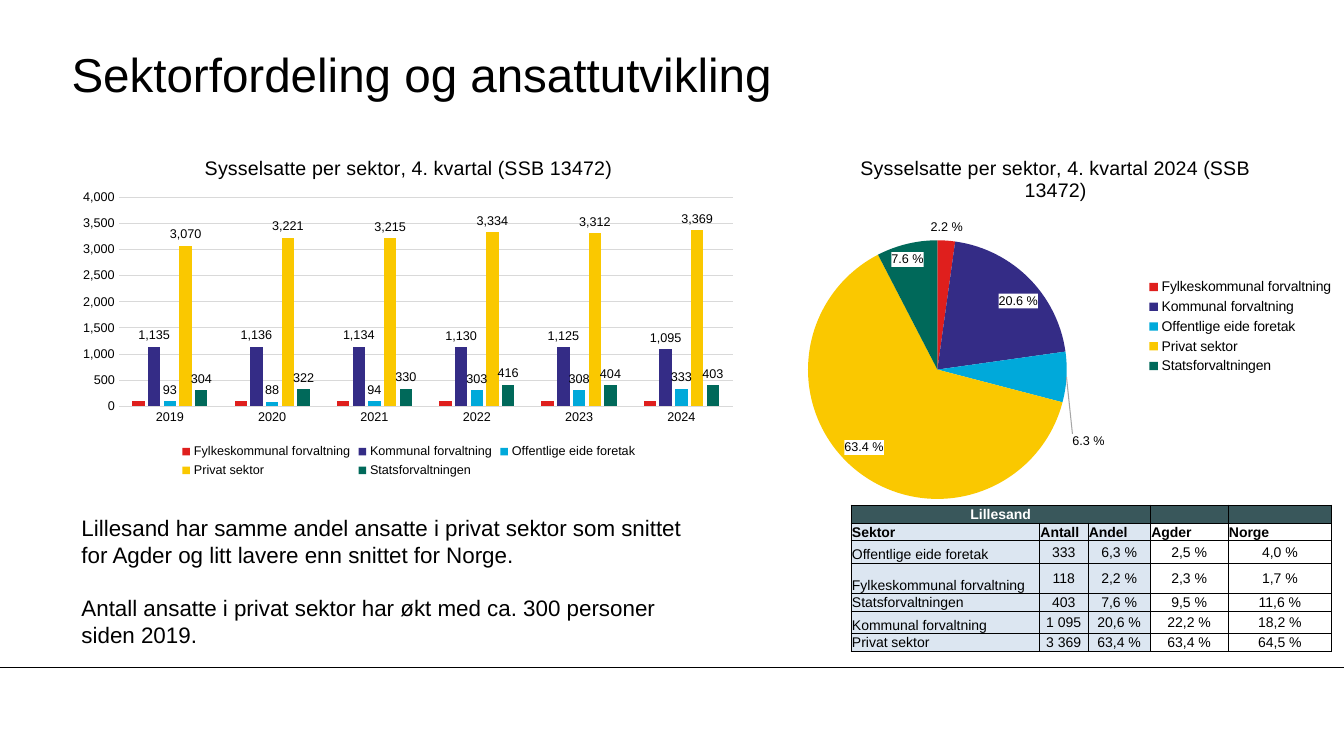
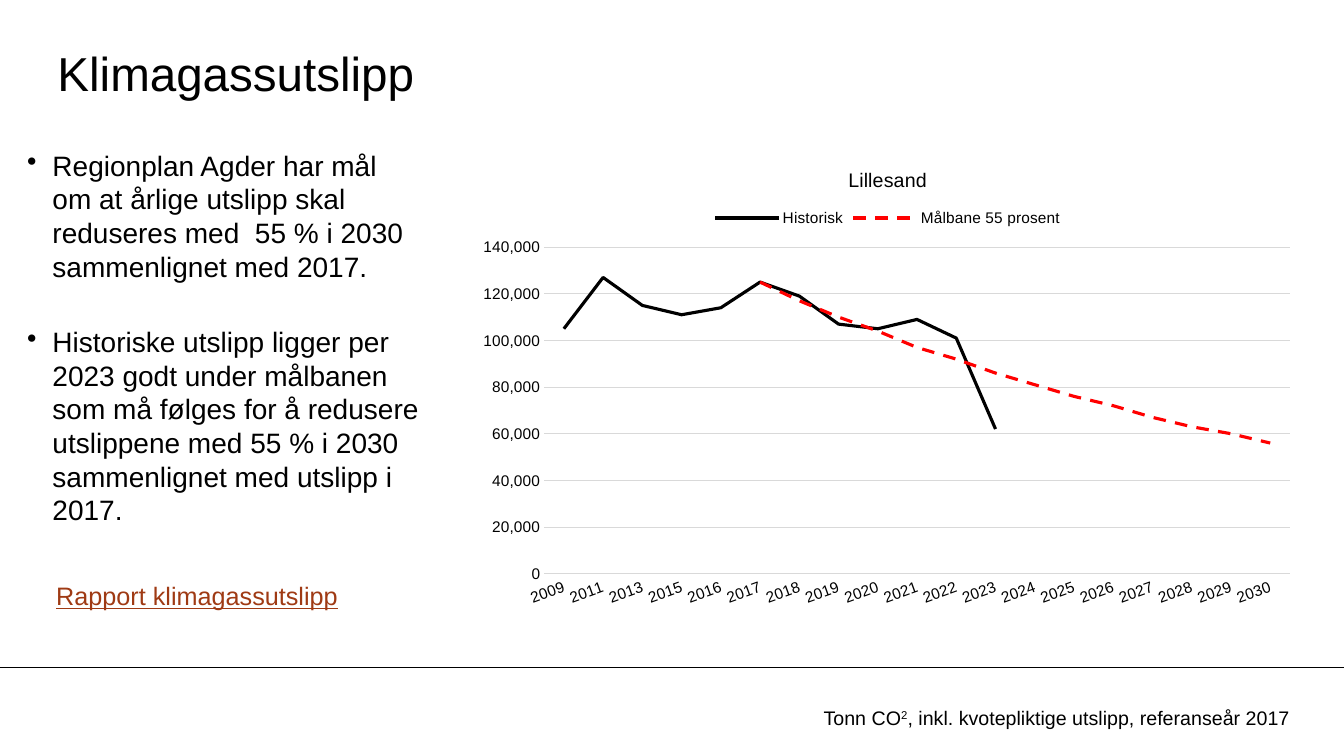
from lxml import etree
from pptx import Presentation
from pptx.chart.data import CategoryChartData
from pptx.dml.color import RGBColor
from pptx.enum.chart import XL_CHART_TYPE as ChartType
from pptx.enum.chart import XL_LABEL_POSITION as LabelPos
from pptx.enum.chart import XL_LEGEND_POSITION as LegendPos
from pptx.enum.chart import XL_MARKER_STYLE as Marker
from pptx.enum.chart import XL_TICK_MARK as Tick
from pptx.enum.dml import MSO_LINE_DASH_STYLE as Dash
from pptx.enum.shapes import MSO_CONNECTOR as Connector
from pptx.enum.text import MSO_ANCHOR as Anchor
from pptx.enum.text import PP_ALIGN as Align
from pptx.oxml.ns import qn
from pptx.util import Inches, Pt

# Shared look
FONT = "Arial"
BLACK, WHITE, GRID, LEADER = "000000", "FFFFFF", "D9D9D9", "A6A6A6"
HEADER, OWN_AREA, LINK, TARGET = "39575B", "DCE6F1", "9F3A14", "FF0000"
SECTOR_COLORS = {
    "Fylkeskommunal forvaltning": "DF1F1D",
    "Kommunal forvaltning": "342C86",
    "Offentlige eide foretak": "00A9DA",
    "Privat sektor": "FAC800",
    "Statsforvaltningen": "00695A",
}

# Content
EMPLOYED = [
    [100] * 6,
    [1135, 1136, 1134, 1130, 1125, 1095],
    [93, 88, 94, 303, 308, 333],
    [3070, 3221, 3215, 3334, 3312, 3369],
    [304, 322, 330, 416, 404, 403],
]
SHARES = [2.2, 20.6, 6.3, 63.4, 7.6]
SECTOR_ROWS = [
    ["Lillesand", "", "", "", ""],
    ["Sektor", "Antall", "Andel", "Agder", "Norge"],
    ["Offentlige eide foretak", "333", "6,3 %", "2,5 %", "4,0 %"],
    ["Fylkeskommunal forvaltning", "118", "2,2 %", "2,3 %", "1,7 %"],
    ["Statsforvaltningen", "403", "7,6 %", "9,5 %", "11,6 %"],
    ["Kommunal forvaltning", "1 095", "20,6 %", "22,2 %", "18,2 %"],
    ["Privat sektor", "3 369", "63,4 %", "63,4 %", "64,5 %"],
]
COLUMN_WIDTHS = [1.87, 0.48, 0.62, 0.77, 1.03]
ROW_HEIGHTS = [0.16, 0.16, 0.22, 0.3, 0.16, 0.22, 0.16]
EMISSION_YEARS = ["2009", "2011", "2013"] + [str(y) for y in range(2015, 2031)]
HISTORIC = [105000, 127000, 115000, 111000, 114000, 125000,
            119000, 107000, 105000, 109000, 101000, 62000] + [None] * 7
TARGET_PATH = [None] * 5 + [125000, 117000, 110000, 104000, 97000, 92000, 86000,
                            81000, 76000, 72000, 67000, 63000, 60000, 56000]


def rgb(color):
    return RGBColor.from_string(color)


def style_font(font, size, color=BLACK, bold=False):
    font.name, font.size, font.bold = FONT, Pt(size), bold
    font.color.rgb = rgb(color)


def add_run(paragraph, text, size, color=BLACK, bold=False):
    run = paragraph.add_run()
    run.text = text
    style_font(run.font, size, color, bold)
    return run


def add_solid_fill(parent, color):
    fill = etree.SubElement(parent, qn("a:solidFill"))
    etree.SubElement(fill, qn("a:srgbClr")).set("val", color)


# Text
def text_frame(slide, box, inset=True, anchor=Anchor.TOP):
    frame = slide.shapes.add_textbox(*map(Inches, box)).text_frame
    frame.word_wrap = True
    frame.vertical_anchor = anchor
    if not inset:
        frame.margin_left = frame.margin_right = 0
        frame.margin_top = frame.margin_bottom = 0
    return frame


def add_paragraphs(frame, texts, size, gap, bullet=False):
    for i, text in enumerate(texts):
        paragraph = frame.add_paragraph() if i else frame.paragraphs[0]
        if bullet:
            props = paragraph._p.get_or_add_pPr()
            props.set("marL", str(Inches(0.25)))
            props.set("indent", str(Inches(-0.25)))
            etree.SubElement(props, qn("a:buChar")).set("char", "•")
        if i:
            paragraph.space_before = Pt(gap)
        add_run(paragraph, text, size)


def add_slide(prs, title, left, top):
    """Blank slide with the shared title style and footer rule."""
    slide = prs.slides.add_slide(prs.slide_layouts[6])
    rule = slide.shapes.add_connector(
        Connector.STRAIGHT, 0, Inches(6.62), prs.slide_width, Inches(6.62))
    rule.line.color.rgb = rgb(BLACK)
    rule.line.width = Pt(0.75)
    etree.SubElement(rule._element.spPr, qn("a:effectLst"))
    frame = text_frame(slide, (left, top, 11.1, 0.75), False, Anchor.MIDDLE)
    add_run(frame.paragraphs[0], title, 34)
    return slide


# Table
def add_borders(cell):
    props = cell._tc.get_or_add_tcPr()
    for i, side in enumerate(("a:lnL", "a:lnR", "a:lnT", "a:lnB")):
        border = etree.Element(qn(side), w=str(Pt(0.5)))
        add_solid_fill(border, BLACK)
        props.insert(i, border)


def fill_cell(cell, text, row, col):
    if row == 0 or col < 3:
        cell.fill.solid()
        cell.fill.fore_color.rgb = rgb(OWN_AREA if row else HEADER)
    else:
        cell.fill.background()
    add_borders(cell)
    cell.margin_left = cell.margin_right = cell.margin_top = Inches(0.01)
    cell.margin_bottom = 0
    figure = row > 1 and col > 0
    cell.vertical_anchor = Anchor.MIDDLE if figure else Anchor.BOTTOM
    paragraph = cell.text_frame.paragraphs[0]
    paragraph.alignment = Align.CENTER if figure or row == 0 else Align.LEFT
    if text:
        add_run(paragraph, text, 10, BLACK if row else WHITE, bold=row < 2)
    else:
        etree.SubElement(paragraph._p, qn("a:endParaRPr")).set("sz", "1000")


def add_sector_table(slide, box):
    table = slide.shapes.add_table(
        len(ROW_HEIGHTS), len(COLUMN_WIDTHS), *map(Inches, box)).table
    table.first_row = table.horz_banding = False
    for column, width in zip(table.columns, COLUMN_WIDTHS):
        column.width = Inches(width)
    for row, height in zip(table.rows, ROW_HEIGHTS):
        row.height = Inches(height)
    for r, texts in enumerate(SECTOR_ROWS):
        for c, text in enumerate(texts):
            fill_cell(table.cell(r, c), text, r, c)
    table.cell(0, 0).merge(table.cell(0, 2))


# Charts
def manual_layout(**places):
    layout = etree.Element(qn("c:layout"))
    manual = etree.SubElement(layout, qn("c:manualLayout"))
    for name, value in places.items():
        etree.SubElement(manual, qn(f"c:{name}")).set("val", str(value))
    return layout


def add_chart(slide, kind, box, plot_box, title, cats, series, legend, legend_size):
    data = CategoryChartData()
    data.categories = cats
    for name, values in series:
        data.add_series(name, values)
    chart = slide.shapes.add_chart(kind, *map(Inches, box), data).chart
    style_font(chart.font, 10)
    add_run(chart.chart_title.text_frame.paragraphs[0], title, 14)
    chart.has_legend = True
    chart.legend.position = legend
    chart.legend.include_in_layout = False
    style_font(chart.legend.font, legend_size)
    # Fixed inner plot area, as fractions of the chart
    area = chart.element.find(".//" + qn("c:plotArea"))
    for old in area.findall(qn("c:layout")):
        area.remove(old)
    x, y, w, h = plot_box
    area.insert(0, manual_layout(layoutTarget="inner", xMode="edge", yMode="edge",
                                 x=x, y=y, w=w, h=h))
    return chart


def style_axes(chart, size, top, step):
    years, amounts = chart.category_axis, chart.value_axis
    for axis in (years, amounts):
        style_font(axis.tick_labels.font, size)
        axis.major_tick_mark = axis.minor_tick_mark = Tick.NONE
    amounts.minimum_scale, amounts.maximum_scale = 0, top
    amounts.major_unit = step
    amounts.tick_labels.number_format = "#,##0"
    amounts.tick_labels.number_format_is_linked = False
    amounts.format.line.fill.background()
    for line in (years.format.line, amounts.major_gridlines.format.line):
        line.color.rgb = rgb(GRID)
        line.width = Pt(0.75)


def label_values(series, number_format, position):
    labels = series.data_labels
    labels.show_value = True
    labels.number_format = number_format
    labels.number_format_is_linked = False
    labels.position = position
    style_font(labels.font, 9)


def add_employed_chart(slide):
    chart = add_chart(
        slide, ChartType.COLUMN_CLUSTERED, (0.71, 1.38, 6.69, 3.4),
        (0.07, 0.17, 0.91, 0.61), "Sysselsatte per sektor, 4. kvartal (SSB 13472)",
        [str(y) for y in range(2019, 2025)], zip(SECTOR_COLORS, EMPLOYED),
        LegendPos.BOTTOM, 9)
    style_axes(chart, 9, 4000, 500)
    plot = chart.plots[0]
    plot.gap_width, plot.overlap = 219, -27
    plot.vary_by_categories = False
    for i, (sector, color) in enumerate(zip(plot.series, SECTOR_COLORS.values())):
        sector.format.fill.solid()
        sector.format.fill.fore_color.rgb = rgb(color)
        if i:
            label_values(sector, "#,##0", LabelPos.OUTSIDE_END)


def add_share_chart(slide):
    percent = '0.0" %"'
    chart = add_chart(
        slide, ChartType.PIE, (7.61, 1.38, 5.72, 3.72), (0.07, 0.27, 0.45, 0.69),
        "Sysselsatte per sektor, 4. kvartal 2024 (SSB 13472)",
        list(SECTOR_COLORS), [("Andel", SHARES)], LegendPos.RIGHT, 10)
    plot = chart.plots[0]
    plot.vary_by_categories = True
    shares = plot.series[0]
    for i, color in enumerate(SECTOR_COLORS.values()):
        fill = shares.points[i].format.fill
        fill.solid()
        fill.fore_color.rgb = rgb(color)
    label_values(shares, percent, LabelPos.BEST_FIT)
    # White plates behind the labels, grey leader line
    labels = chart.element.find(".//" + qn("c:dLbls"))
    plate = etree.Element(qn("c:spPr"))
    add_solid_fill(plate, WHITE)
    labels.find(qn("c:numFmt")).addnext(plate)
    leader = etree.SubElement(labels, qn("c:leaderLines"))
    leader_look = etree.SubElement(leader, qn("c:spPr"))
    add_solid_fill(etree.SubElement(leader_look, qn("a:ln"), w=str(Pt(0.75))), LEADER)
    # The two narrow slices are labelled outside, the second one further down
    for i in (0, 2):
        label = shares.points[i].data_label
        style_font(label.font, 9)
        label.position = LabelPos.OUTSIDE_END
    for label in labels.findall(qn("c:dLbl")):
        index = label.find(qn("c:idx"))
        index.addnext(etree.Element(qn("c:numFmt"), formatCode=percent, sourceLinked="0"))
        if index.get("val") == "2":
            index.addnext(manual_layout(x=0, y=0.17))


def add_emission_chart(slide):
    chart = add_chart(
        slide, ChartType.LINE, (4.65, 1.48, 8.31, 4.63), (0.09, 0.21, 0.89, 0.7),
        "Lillesand", EMISSION_YEARS,
        [("Historisk", HISTORIC), ("Målbane 55 prosent", TARGET_PATH)],
        LegendPos.TOP, 11)
    style_axes(chart, 11, 140000, 20000)
    slant = chart.element.find(f".//{qn('c:catAx')}/{qn('c:txPr')}/{qn('a:bodyPr')}")
    slant.set("rot", str(-20 * 60000))
    for path_line, color in zip(chart.plots[0].series, (BLACK, TARGET)):
        path_line.smooth = False
        path_line.marker.style = Marker.NONE
        path_line.format.line.color.rgb = rgb(color)
        path_line.format.line.width = Pt(2.25)
    path_line.format.line.dash_style = Dash.DASH


# Slides
def add_sector_slide(prs):
    slide = add_slide(prs, "Sektorfordeling og ansattutvikling", 0.71, 0.35)
    add_paragraphs(text_frame(slide, (0.71, 5.05, 6.41, 1.45)), [
        "Lillesand har samme andel ansatte i privat sektor som snittet for Agder "
        "og litt lavere enn snittet for Norge.",
        "Antall ansatte i privat sektor har økt med ca. 300 personer siden 2019.",
    ], 16, 19)
    add_employed_chart(slide)
    add_share_chart(slide)
    add_sector_table(slide, (8.44, 5.01, 4.77, 1.38))


def add_climate_slide(prs):
    slide = add_slide(prs, "Klimagassutslipp", 0.57, 0.34)
    add_paragraphs(text_frame(slide, (0.27, 1.47, 3.92, 3.85), inset=False), [
        "Regionplan Agder har mål om at årlige utslipp skal reduseres med  55 % "
        "i 2030 sammenlignet med 2017.",
        "Historiske utslipp ligger per 2023 godt under målbanen som må følges for "
        "å redusere utslippene med 55 % i 2030 sammenlignet med utslipp i 2017.",
    ], 20, 30, bullet=True)
    add_emission_chart(slide)
    unit = text_frame(slide, (8.07, 6.95, 5.09, 0.34)).paragraphs[0]
    add_run(unit, "Tonn CO", 14)
    add_run(unit, "2", 14).font._element.set("baseline", "30000")
    add_run(unit, ", inkl. kvotepliktige utslipp, referanseår 2017", 14)
    report = text_frame(slide, (0.46, 5.71, 3.16, 0.4)).paragraphs[0]
    add_run(report, "Rapport klimagassutslipp", 18, LINK).font.underline = True


def main():
    prs = Presentation()
    prs.slide_width, prs.slide_height = Inches(13.33), Inches(7.5)
    add_sector_slide(prs)
    add_climate_slide(prs)
    prs.save("out.pptx")


if __name__ == "__main__":
    main()
